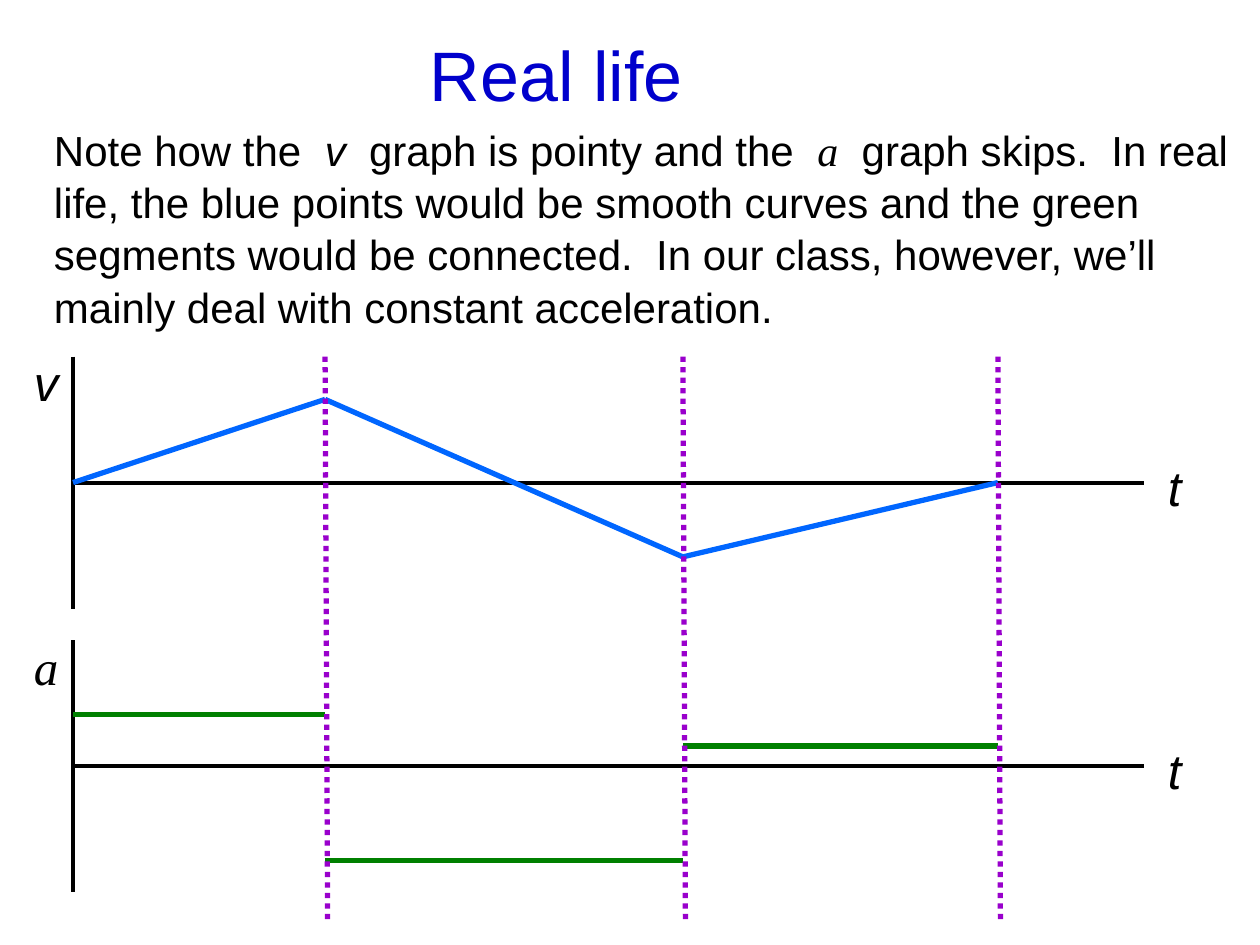
from lxml import etree
from pptx import Presentation
from pptx.dml.color import RGBColor
from pptx.enum import dml, shapes, text
from pptx.oxml.ns import qn
from pptx.util import Inches, Pt

COLORS = {"title": "0000CC", "ink": "000000", "velocity": "0066FF",
          "acceleration": "008000", "guide": "9900CC"}
TIMES = [0, 2, 4.84, 7.34]
VELOCITIES = [0, 0.66, -0.59, 0]
ACCELERATIONS = [0.41, -0.75, 0.16]
AXIS_X, AXIS_TOP, AXIS_HEIGHT, AXIS_WIDTH = 0.41, 0.08, 2, 8.5


def add_text(parent, box, runs, size, color="ink", align=text.PP_ALIGN.LEFT,
             anchor=text.MSO_ANCHOR.TOP, wrap=True, spacing=None):
    sp = parent.add_textbox(*map(Inches, box))
    tf = sp.text_frame
    tf.word_wrap = wrap
    tf.vertical_anchor = anchor
    p = tf.paragraphs[0]
    p.alignment = align
    p.line_spacing = spacing
    for words, font, italic in runs:
        r = p.add_run()
        r.text = words
        r.font.name = font
        r.font.size = Pt(size)
        r.font.italic = italic
        r.font.color.rgb = RGBColor.from_string(COLORS[color])


def add_line(parent, start, end, color, width=3, dash=None):
    sp = parent.add_connector(shapes.MSO_CONNECTOR.STRAIGHT,
                              *map(Inches, (*start, *end)))
    sp.line.color.rgb = RGBColor.from_string(COLORS[color])
    sp.line.width = Pt(width)
    if dash:
        sp.line.dash_style = dash
    etree.SubElement(sp._element.spPr, qn("a:effectLst"))


def add_heading(s, left, top):
    add_text(s.shapes, (left, top, 2.67, 0.83), [("Real life", "Arial", False)],
             40, "title", text.PP_ALIGN.CENTER, text.MSO_ANCHOR.MIDDLE)


def add_note(s, left, top):
    add_text(s.shapes, (left, top, 9.67, 1.7), [
        ("Note how the  ", "Arial", False),
        ("v", "Arial", True),
        ("  graph is pointy and the  ", "Arial", False),
        ("a", "Times New Roman", True),
        ("  graph skips.  In real life, the blue points would be smooth curves "
         "and the green segments would be connected.  In our class, however, "
         "we’ll mainly deal with constant acceleration.", "Arial", False),
    ], 24, spacing=1.04)


def add_graph(s, left, top, name, font, segments, color):
    group = s.shapes.add_group_shape().shapes
    x, y = left + AXIS_X, top + AXIS_TOP
    middle = y + AXIS_HEIGHT / 2
    add_line(group, (x, y), (x, y + AXIS_HEIGHT), "ink", 2.25)
    add_line(group, (x, middle), (x + AXIS_WIDTH, middle), "ink", 2.25)
    add_text(group, (left, top, 0.4, 0.57), [(name, font, True)], 28, wrap=False)
    add_text(group, (left + 9, top + 0.83, 0.31, 0.57), [("t", "Arial", True)],
             28, wrap=False)
    for (t0, t1), (v0, v1) in zip(zip(TIMES, TIMES[1:]), segments):
        add_line(group, (x + t0, middle - v0), (x + t1, middle - v1), color)


def add_guides(s, left, top, height):
    for t in TIMES[1:]:
        x = left + AXIS_X + t
        add_line(s.shapes, (x, top), (x + 0.02, top + height), "guide",
                 dash=dml.MSO_LINE.ROUND_DOT)


def main():
    prs = Presentation()
    prs.slide_width, prs.slide_height = Inches(10), Inches(7.5)
    s = prs.slides.add_slide(prs.slide_layouts[6])
    add_heading(s, 3.08, 0.17)
    add_note(s, 0.33, 0.92)
    add_graph(s, 0.17, 5, "a", "Times New Roman",
              list(zip(ACCELERATIONS, ACCELERATIONS)), "acceleration")
    add_graph(s, 0.17, 2.75, "v", "Arial",
              list(zip(VELOCITIES, VELOCITIES[1:])), "velocity")
    add_guides(s, 0.17, 2.83, 4.48)
    prs.save("out.pptx")


if __name__ == "__main__":
    main()
